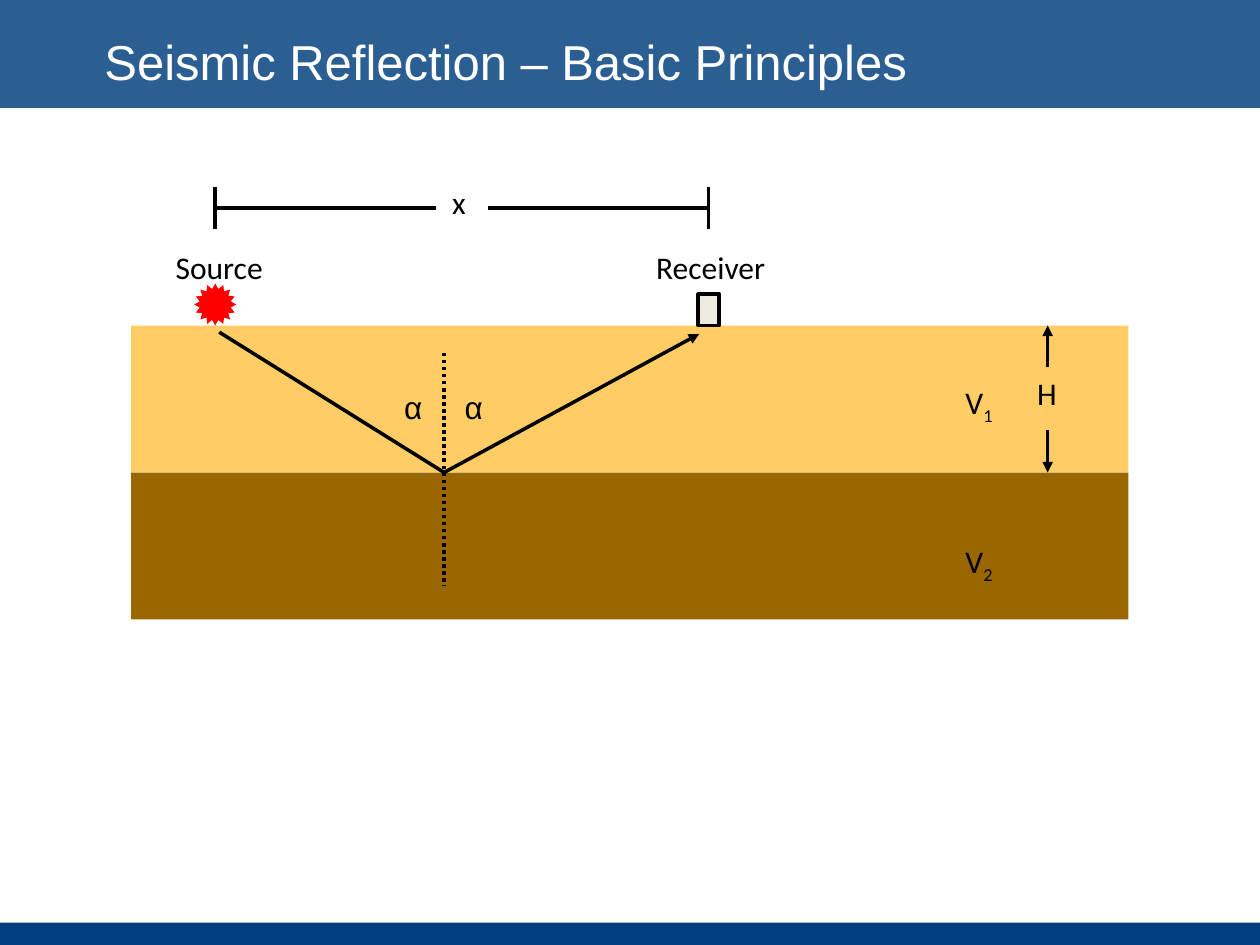
import pptx
import pptx.util
import pptx.dml.color
import pptx.enum.dml
import pptx.enum.shapes
import pptx.enum.text
import pptx.oxml
import pptx.oxml.ns

Pt = pptx.util.Pt
RGB = pptx.dml.color.RGBColor
SHAPE = pptx.enum.shapes.MSO_SHAPE
BLACK = RGB(0x00, 0x00, 0x00)
WHITE = RGB(0xFF, 0xFF, 0xFF)
NAVY = RGB(0x00, 0x3E, 0x7E)
SAND = RGB(0xFF, 0xCC, 0x66)
BROWN = RGB(0x99, 0x66, 0x00)
RED = RGB(0xFF, 0x00, 0x00)
IVORY = RGB(0xEE, 0xEC, 0xE1)

GROUND_LEFT, GROUND_WIDTH = 74.9, 570
SURFACE, LAYER_HEIGHT = 186, 84
REFLECTOR = SURFACE + LAYER_HEIGHT
SOURCE_X, RECEIVER_X = 123, 405
DEPTH_X, DIMENSION_Y, TICK = 598.7, 119, 12
NORMAL_X = 253.8

deck = pptx.Presentation()
deck.slide_width, deck.slide_height = Pt(720), Pt(540)
slide = deck.slides.add_slide(deck.slide_layouts[5])


def add_filled(kind, left, top, width, height, color):
    shape = slide.shapes.add_shape(kind, Pt(left), Pt(top), Pt(width), Pt(height))
    shape.shadow.inherit = False
    shape.fill.solid()
    shape.fill.fore_color.rgb = color
    shape.line.fill.background()
    return shape


def style_line(shape, arrow=False):
    shape.line.color.rgb = BLACK
    shape.line.width = Pt(2)
    properties = shape._element.spPr
    if properties.find(pptx.oxml.ns.qn("a:effectLst")) is None:
        properties.append(pptx.oxml.parse_xml(f"<a:effectLst {pptx.oxml.ns.nsdecls('a')}/>"))
    if arrow:
        head = f'<a:tailEnd {pptx.oxml.ns.nsdecls("a")} type="triangle"/>'
        shape.line._get_or_add_ln().append(pptx.oxml.parse_xml(head))


add_filled(SHAPE.RECTANGLE, 0, 527.2, 720, 12.8, NAVY)
header = add_filled(SHAPE.RECTANGLE, 0, 0, 720, 61.7, NAVY)
header_color = header._element.spPr.find(".//" + pptx.oxml.ns.qn("a:srgbClr"))
header_color.append(pptx.oxml.parse_xml(f'<a:alpha {pptx.oxml.ns.nsdecls("a")} val="83000"/>'))

title = slide.shapes.title
slide.shapes._spTree.append(title._element)
title.left, title.top, title.width, title.height = Pt(52.5), Pt(13.7), Pt(487.5), Pt(41.8)
title.text_frame.vertical_anchor = pptx.enum.text.MSO_ANCHOR.MIDDLE
title.text_frame.auto_size = pptx.enum.text.MSO_AUTO_SIZE.NONE
para = title.text_frame.paragraphs[0]
para.alignment = pptx.enum.text.PP_ALIGN.LEFT
span = para.add_run()
span.text = "Seismic Reflection – Basic Principles"
span.font.name, span.font.size = "Arial", Pt(28)
span.font.color.rgb = WHITE

for row, color in enumerate((SAND, BROWN)):
    add_filled(SHAPE.RECTANGLE, GROUND_LEFT, SURFACE + row * LAYER_HEIGHT,
               GROUND_WIDTH, LAYER_HEIGHT, color)
burst = add_filled(SHAPE.STAR_16_POINT, SOURCE_X - 12, SURFACE - 24, 24, 24, RED)
burst.adjustments[0] = 0.375
receiver = add_filled(SHAPE.RECTANGLE, RECEIVER_X - 6, SURFACE - 18, 12, 18, IVORY)
style_line(receiver)

lines = [
    (SOURCE_X, DIMENSION_Y, 249, DIMENSION_Y, False),
    (279, DIMENSION_Y, RECEIVER_X, DIMENSION_Y, False),
    (SOURCE_X, DIMENSION_Y - TICK, SOURCE_X, DIMENSION_Y + TICK, False),
    (RECEIVER_X, DIMENSION_Y - TICK, RECEIVER_X, DIMENSION_Y + TICK, False),
    (DEPTH_X, SURFACE + 24, DEPTH_X, SURFACE, True),
    (DEPTH_X, REFLECTOR - 24, DEPTH_X, REFLECTOR, True),
    (NORMAL_X, 201.6, NORMAL_X, 334.8, False),
]
for x1, y1, x2, y2, arrow in lines:
    line = slide.shapes.add_connector(
        pptx.enum.shapes.MSO_CONNECTOR.STRAIGHT, Pt(x1), Pt(y1), Pt(x2), Pt(y2))
    style_line(line, arrow)
line.line.dash_style = pptx.enum.dml.MSO_LINE.ROUND_DOT

builder = slide.shapes.build_freeform(Pt(125.3), Pt(189.8))
builder.add_line_segments([(Pt(NORMAL_X), Pt(REFLECTOR)), (Pt(399.6), Pt(190.8))], close=False)
ray = builder.convert_to_shape()
ray.shadow.inherit = False
ray.fill.background()
style_line(ray, True)

labels = [
    ("Source", "", "Calibri", 92.9, 138.2, 64.8, 29),
    ("Receiver", "", "Calibri", 367.2, 138.2, 77.8, 29),
    ("V", "1", "Calibri", 542.9, 215.3, 33.1, 29),
    ("V", "2", "Calibri", 542.9, 306, 33.1, 29),
    ("x", "", "Calibri", 249, 100.8, 26.6, 36),
    ("H", "", "Calibri", 584.6, 210.2, 27.4, 29),
    ("α", "", "Arial", 257.8, 218.2, 25.9, 29),
    ("α", "", "Arial", 223.2, 218.2, 25.9, 29),
]
for text, subscript, font, left, top, width, height in labels:
    box = slide.shapes.add_textbox(Pt(left), Pt(top), Pt(width), Pt(height))
    box.text_frame.word_wrap = False
    box.text_frame.auto_size = pptx.enum.text.MSO_AUTO_SIZE.SHAPE_TO_FIT_TEXT
    para = box.text_frame.paragraphs[0]
    para.alignment = pptx.enum.text.PP_ALIGN.CENTER
    for part in filter(None, (text, subscript)):
        span = para.add_run()
        span.text = part
        span.font.name, span.font.size = font, Pt(18)
        span.font.color.rgb = BLACK
    if subscript:
        span.font._element.set("baseline", "-25000")

deck.save("out.pptx")
